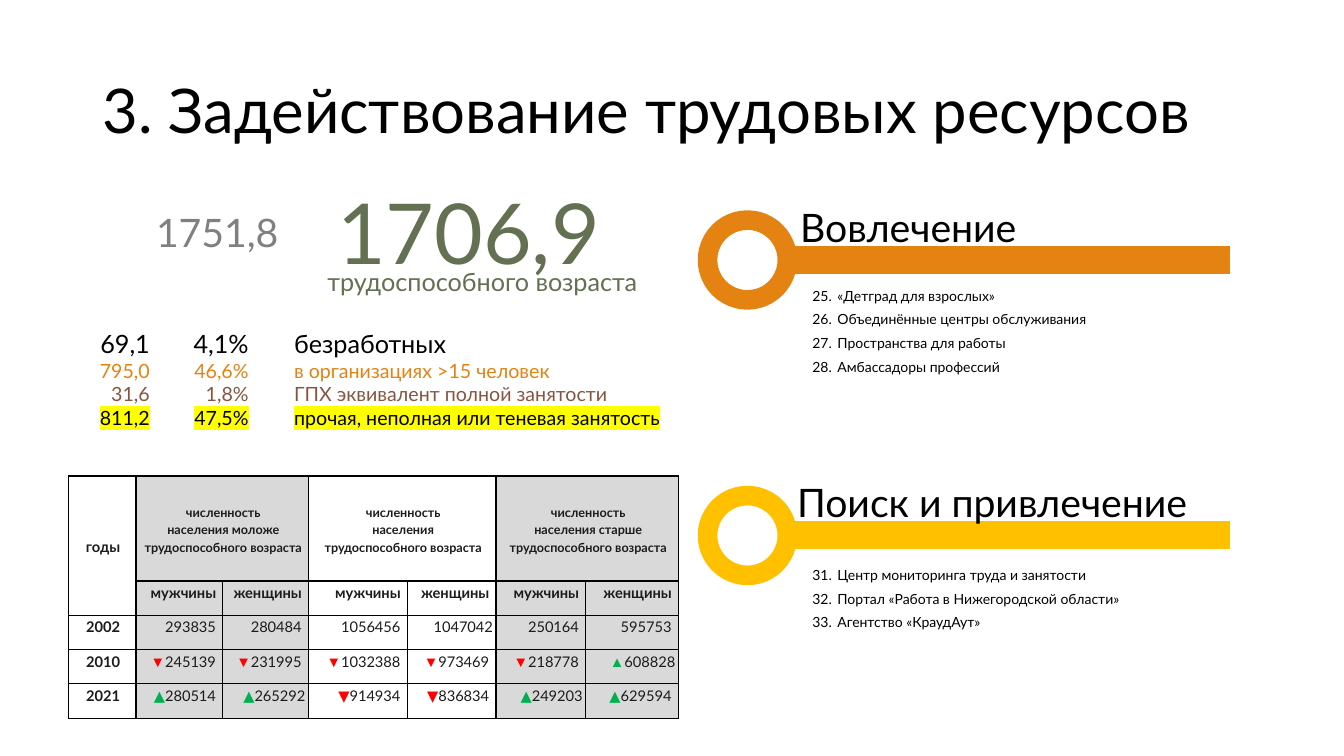
from lxml import etree
from pptx import Presentation
from pptx import util as u
from pptx.dml import color
from pptx.enum import shapes, text
from pptx.oxml import ns

HUES = {
    "black": "000000", "ink": "1C1C1A", "white": "FFFFFF", "gray": "808080",
    "shade": "D9D9D9", "olive": "637052", "orange": "E48312",
    "brown": "865640", "gold": "FFC000", "yellow": "FFFF00",
    "red": "FF0000", "green": "00B050",
}
MARKS = {"▼": "red", "▲": "green"}
LEFT, MID, RIGHT = text.PP_ALIGN.LEFT, text.PP_ALIGN.CENTER, text.PP_ALIGN.RIGHT
GROW, FIXED = text.MSO_AUTO_SIZE.SHAPE_TO_FIT_TEXT, text.MSO_AUTO_SIZE.NONE

COLS = [48.2, 61.9, 61.2, 70.6, 63.4, 64.1, 66.2]
ROWS = [75] + [24.5] * 4
GROUPS = ["населения моложе ", "населения ", "населения старше "]
COUNTS = [
    ["мужчины ", "женщины "] * 3,
    ["293835 ", "280484 ", "1056456 ", "1047042", "250164 ", "595753 "],
    ["▼245139 ", "▼231995 ", "▼1032388 ", "▼973469 ", "▼218778 ", "▲608828"],
    ["▲280514 ", "▲265292", "▼914934 ", "▼836834 ", "▲249203", "▲629594 "],
]
YEARS = {2: "2002 ", 3: "2010 ", 4: "2021 "}
STATS = [
    ("69,1\t4,1%\tбезработных", 18, "black", None),
    ("795,0\t46,6%\tв организациях >15 человек", 14, "orange", None),
    ("31,6\t1,8%\tГПХ эквивалент полной занятости", 14, "brown", None),
    ("811,2\t47,5%\tпрочая, неполная или теневая занятость", 14, "black", "yellow"),
]


def rgb(hue):
    return color.RGBColor.from_string(HUES[hue])


def style(item, **vals):
    for key, val in vals.items():
        setattr(item, key, val)


def child(node, tag, **vals):
    return etree.SubElement(node, ns.qn(tag), {k: str(v) for k, v in vals.items()})


def place(shape, left, top, width, height):
    style(shape, left=u.Pt(left), top=u.Pt(top), width=u.Pt(width), height=u.Pt(height))


def add_run(para, words, size, hue, face="Lato", bold=False, glow=None):
    run = para.add_run()
    run.text = words
    style(run.font, size=u.Pt(size), name=face, bold=bold)
    run.font.color.rgb = rgb(hue)
    if glow:
        mark = etree.Element(ns.qn("a:highlight"))
        child(mark, "a:srgbClr", val=HUES[glow])
        run.font._element.find(ns.qn("a:solidFill")).addnext(mark)


def add_text(slide, box, words, size, hue, align=LEFT, wrap=True, fit=GROW, lead=None):
    shape = slide.shapes.add_textbox(*map(u.Pt, box))
    style(shape.text_frame, word_wrap=wrap, auto_size=fit)
    para = shape.text_frame.paragraphs[0]
    style(para, alignment=align, line_spacing=lead)
    add_run(para, words, size, hue)


def fill_title(slide, words):
    title = slide.shapes.title
    place(title, 66, 29, 860, 104)
    style(title.text_frame, auto_size=FIXED, vertical_anchor=text.MSO_ANCHOR.MIDDLE)
    para = title.text_frame.paragraphs[0]
    style(para, alignment=LEFT, line_spacing=0.9)
    add_run(para, words, 44, "black")


def fill_list(holder, top, start, items):
    place(holder, 573, top, 320, 116)
    frame = holder.text_frame
    frame.auto_size = FIXED
    for i, words in enumerate(items):
        para = frame.add_paragraph() if i else frame.paragraphs[0]
        props = para._p.get_or_add_pPr()
        style(para, line_spacing=0.9, space_before=u.Pt(0), space_after=u.Pt(6))
        props.set("marL", str(u.Pt(18)))
        props.set("indent", str(u.Pt(-18)))
        child(props, "a:buFont", typeface="+mj-lt")
        child(props, "a:buAutoNum", type="arabicPeriod", startAt=start)
        add_run(para, words, 10, "black")


def add_badge(slide, top, hue, left, words):
    mid = top + 28.5
    bar = slide.shapes.add_connector(
        shapes.MSO_CONNECTOR.STRAIGHT, *map(u.Pt, (533.5, mid, 878.4, mid)))
    child(bar._element.spPr, "a:effectLst")
    ring = slide.shapes.add_shape(
        shapes.MSO_SHAPE.OVAL, *map(u.Pt, (505.4, top, 57, 57)))
    ring.shadow.inherit = False
    ring.fill.solid()
    ring.fill.fore_color.rgb = rgb("white")
    for item, width in ((bar, 20), (ring, 14)):
        item.line.width = u.Pt(width)
        item.line.color.rgb = rgb(hue)
    add_text(slide, (left, top - 11.8, 316, 46), words, 28, "black", fit=FIXED, lead=0.9)


def add_stats(slide):
    shape = slide.shapes.add_textbox(*map(u.Pt, (-13, 231, 523.5, 85)))
    frame = shape.text_frame
    style(frame, word_wrap=True, auto_size=GROW)
    for i, (words, size, hue, glow) in enumerate(STATS):
        para = frame.add_paragraph() if i else frame.paragraphs[0]
        tabs = child(para._p.get_or_add_pPr(), "a:tabLst")
        for pos, side in ((113, "r"), (183.6, "r"), (216, "l")):
            child(tabs, "a:tab", pos=u.Pt(pos), algn=side)
        add_run(para, "\t", 11, hue)
        add_run(para, words, size, hue, glow=glow)


def dress(cell, hue):
    style(cell, margin_left=u.Pt(5.76), margin_top=u.Pt(1.44),
          margin_right=u.Pt(2.16), margin_bottom=u.Pt(0))
    props = cell._tc.get_or_add_tcPr()
    for tag in ("a:lnL", "a:lnR", "a:lnT", "a:lnB"):
        edge = child(props, tag, w=u.Pt(1))
        child(child(edge, "a:solidFill"), "a:srgbClr", val=HUES["black"])
    cell.fill.solid()
    cell.fill.fore_color.rgb = rgb(hue)


def write(cell, lines, size, align, bold=True, face="Lato"):
    for i, (words, after) in enumerate(lines):
        para = cell.text_frame.add_paragraph() if i else cell.text_frame.paragraphs[0]
        style(para, alignment=align, line_spacing=1.07, space_after=u.Pt(after))
        if words[0] in MARKS:
            add_run(para, words[0], size, MARKS[words[0]], face)
            words = words[1:]
        add_run(para, words, size, "ink", bold=bold)


def add_grid(slide):
    frame = slide.shapes.add_table(
        len(ROWS), len(COLS), *map(u.Pt, (49, 340, sum(COLS), sum(ROWS))))
    grid = frame.table
    style(grid, first_row=False, horz_banding=False)
    for col, width in zip(grid.columns, COLS):
        col.width = u.Pt(width)
    for row, height in zip(grid.rows, ROWS):
        row.height = u.Pt(height)
    for r in range(len(ROWS)):
        for c in range(len(COLS)):
            dress(grid.cell(r, c), "shade" if c in (1, 2, 5, 6) else "white")
    grid.cell(0, 0).merge(grid.cell(1, 0))
    write(grid.cell(0, 0), [("годы ", 8)], 10.5, MID)
    grid.cell(0, 0).vertical_anchor = text.MSO_ANCHOR.MIDDLE
    for i, group in enumerate(GROUPS):
        head = grid.cell(0, 2 * i + 1)
        head.merge(grid.cell(0, 2 * i + 2))
        head.vertical_anchor = text.MSO_ANCHOR.MIDDLE
        lines = [("численность ", 1.1), (group, 1), ("трудоспособного возраста ", 8)]
        write(head, lines, 9, MID)
    for r, year in YEARS.items():
        write(grid.cell(r, 0), [(year, 8)], 10.5, MID)
    for r, counts in enumerate(COUNTS, 1):
        for c, words in enumerate(counts, 1):
            write(grid.cell(r, c), [(words, 8)], 10.5, RIGHT, bold=r == 1,
                  face="Arial" if r == 3 else "Lato")


def main():
    deck = Presentation()
    style(deck, slide_width=u.Pt(960), slide_height=u.Pt(540))
    slide = deck.slides.add_slide(deck.slide_layouts[3])
    fill_title(slide, "3. Задействование трудовых ресурсов")
    fill_list(slide.placeholders[1], 203, 25, [
        "«Детград для взрослых»", "Объединённые центры обслуживания",
        "Пространства для работы", "Амбассадоры профессий"])
    fill_list(slide.placeholders[2], 402.5, 31, [
        "Центр мониторинга труда и занятости",
        "Портал «Работа в Нижегородской области»", "Агентство «КраудАут»"])
    add_badge(slide, 157.2, "orange", 564.5, "Вовлечение")
    add_badge(slide, 354, "gold", 562.3, "Поиск и привлечение")
    add_text(slide, (227.5, 125.3, 208, 80), "1706,9", 60, "olive", RIGHT, wrap=False)
    add_stats(slide)
    add_grid(slide)
    add_text(slide, (101, 145.5, 105, 41), "1751,8", 28, "gray", RIGHT, wrap=False)
    add_text(slide, (188, 186.5, 274.3, 29), "трудоспособного возраста", 18, "olive", RIGHT)
    deck.save("out.pptx")


if __name__ == "__main__":
    main()
